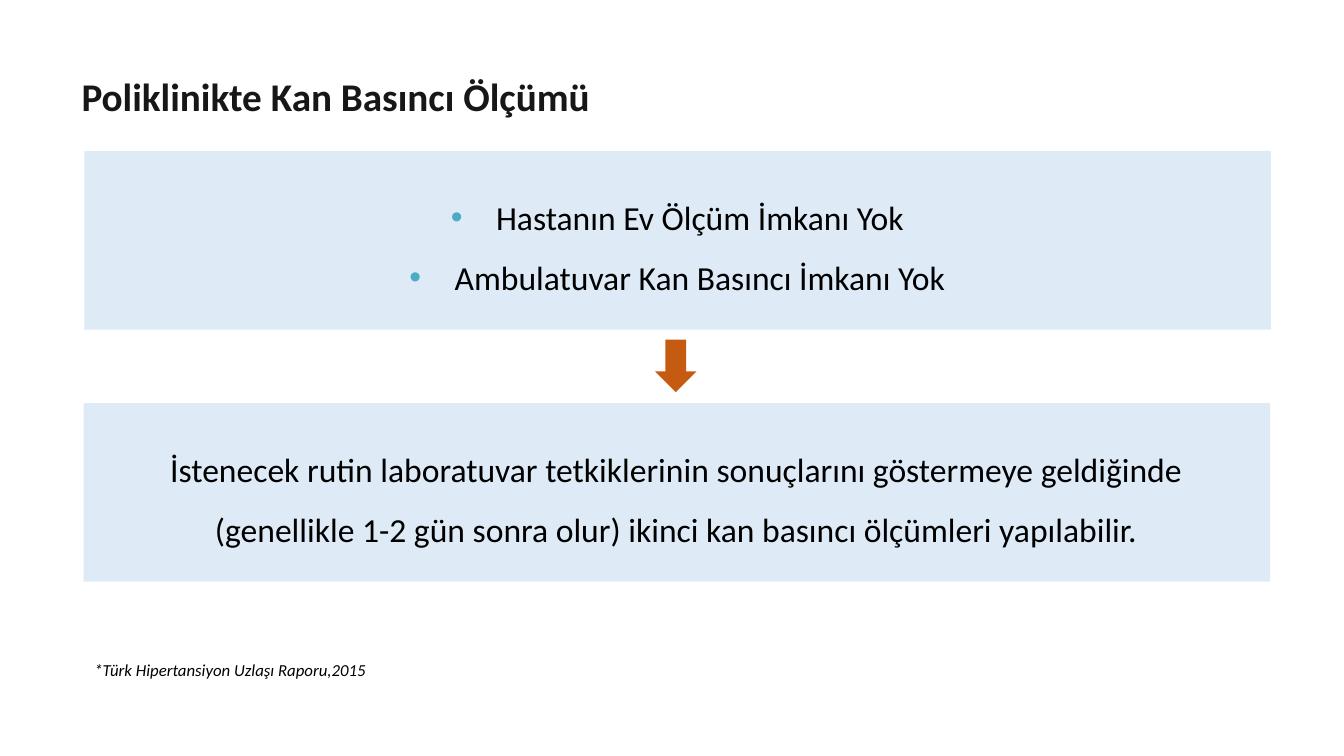
from dataclasses import dataclass

from lxml import etree
from pptx import Presentation, util as u
from pptx.dml.color import RGBColor
from pptx.enum import shapes, text
from pptx.oxml import ns

PANEL_BLUE = RGBColor(0xDE, 0xEB, 0xF7)
ARROW_ORANGE = RGBColor(0xC5, 0x5A, 0x11)
BULLET_TEAL = RGBColor(0x4B, 0xAC, 0xC6)
TITLE_INK = RGBColor(0x18, 0x17, 0x17)
BLACK = RGBColor(0, 0, 0)

LEFT, CENTRE = text.PP_ALIGN.LEFT, text.PP_ALIGN.CENTER
FRAME_FORMAT = {
    "word_wrap": True,
    "auto_size": text.MSO_AUTO_SIZE.NONE,
    "vertical_anchor": text.MSO_ANCHOR.TOP,
}


@dataclass(frozen=True)
class Area:
    left: float
    top: float
    width: float
    height: float

    def lengths(self) -> list[u.Length]:
        return [u.Cm(value) for value in (self.left, self.top, self.width, self.height)]


@dataclass(frozen=True)
class Block:
    kind: shapes.MSO_SHAPE
    area: Area
    colour: RGBColor


@dataclass(frozen=True)
class Wording:
    area: Area
    lines: tuple[str, ...]
    size: int
    colour: RGBColor = BLACK
    bold: bool = False
    italic: bool = False
    align: text.PP_ALIGN = CENTRE
    spacing: float = 1.0
    bulleted: bool = False


RECTANGLE = shapes.MSO_SHAPE.RECTANGLE
BLOCKS = (
    Block(RECTANGLE, Area(2.13, 3.81, 29.9, 4.5), PANEL_BLUE),
    Block(RECTANGLE, Area(2.11, 10.16, 29.9, 4.5), PANEL_BLUE),
    Block(shapes.MSO_SHAPE.DOWN_ARROW, Area(16.51, 8.56, 1.04, 1.32), ARROW_ORANGE),
)

TITLE = Wording(Area(1.8, 1.7, 30.58, 1.45), ("Poliklinikte Kan Basıncı Ölçümü",),
                28, TITLE_INK, bold=True, align=LEFT)
CONDITIONS = Wording(Area(2.77, 4.32, 28.6, 3.18),
                     ("Hastanın Ev Ölçüm İmkanı Yok", "Ambulatuvar Kan Basıncı İmkanı Yok"),
                     24, spacing=1.5, bulleted=True)
FOLLOW_UP = Wording(Area(2.74, 10.67, 28.6, 3.18),
                    ("İstenecek rutin laboratuvar tetkiklerinin sonuçlarını göstermeye geldiğinde "
                     "(genellikle 1-2 gün sonra olur) ikinci kan basıncı ölçümleri yapılabilir.",),
                    24, spacing=1.5)
SOURCE = Wording(Area(2.13, 16.51, 14.83, 0.76), ("*Türk Hipertansiyon Uzlaşı Raporu,2015",),
                 12, italic=True, align=LEFT)


def apply_format(target, values: dict) -> None:
    for name, value in values.items():
        setattr(target, name, value)


def add_bullet(para) -> None:
    properties = para._p.get_or_add_pPr()
    properties.set("marL", str(u.Cm(1.14)))
    properties.set("indent", str(-u.Cm(1.14)))
    colour = etree.SubElement(properties, ns.qn("a:buClr"))
    etree.SubElement(colour, ns.qn("a:srgbClr"), val=str(BULLET_TEAL))
    etree.SubElement(properties, ns.qn("a:buFont"), typeface="Arial")
    etree.SubElement(properties, ns.qn("a:buChar"), char="•")


def write(box, wording: Wording) -> None:
    """Place a text box or placeholder and fill it with formatted lines."""
    apply_format(box, dict(zip(("left", "top", "width", "height"), wording.area.lengths())))
    frame = box.text_frame
    apply_format(frame, FRAME_FORMAT)
    for index, line in enumerate(wording.lines):
        para = frame.add_paragraph() if index else frame.paragraphs[0]
        if wording.bulleted:
            add_bullet(para)
        apply_format(para, {"alignment": wording.align, "line_spacing": wording.spacing,
                            "space_before": u.Pt(0)})
        span = para.add_run()
        span.text = line
        apply_format(span.font, {"name": "Calibri", "size": u.Pt(wording.size),
                                 "bold": wording.bold, "italic": wording.italic})
        span.font.color.rgb = wording.colour


def draw_block(page, block: Block) -> None:
    shape = page.shapes.add_shape(block.kind, *block.area.lengths())
    shape.shadow.inherit = False
    shape.fill.solid()
    shape.fill.fore_color.rgb = block.colour
    shape.line.fill.background()


def main() -> None:
    deck = Presentation()
    apply_format(deck, {"slide_width": u.Cm(33.87), "slide_height": u.Cm(19.05)})
    page = deck.slides.add_slide(deck.slide_layouts[1])
    title, body = page.placeholders

    for block in BLOCKS:
        draw_block(page, block)
    page.shapes._spTree.append(body._element)  # bring the list in front of its panel

    write(title, TITLE)
    write(body, CONDITIONS)
    for wording in (FOLLOW_UP, SOURCE):
        write(page.shapes.add_textbox(*wording.area.lengths()), wording)
    deck.save("out.pptx")


if __name__ == "__main__":
    main()
